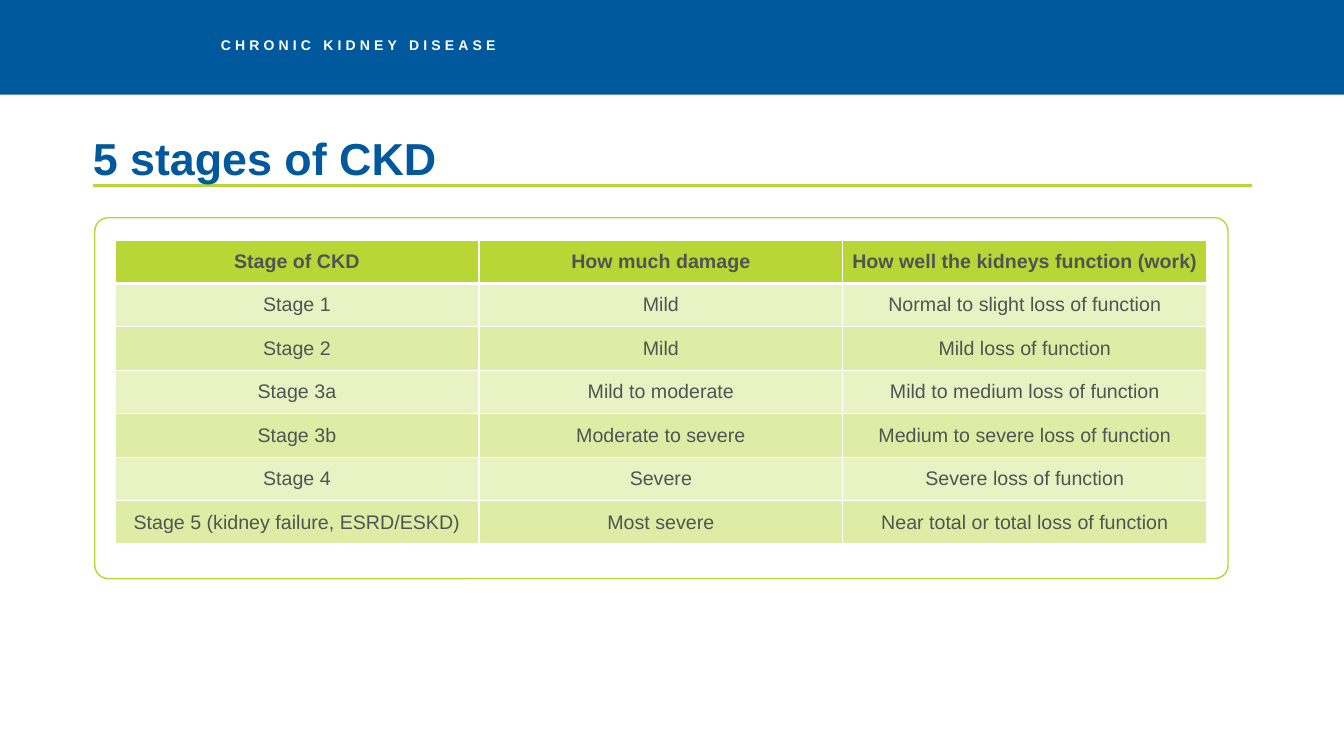
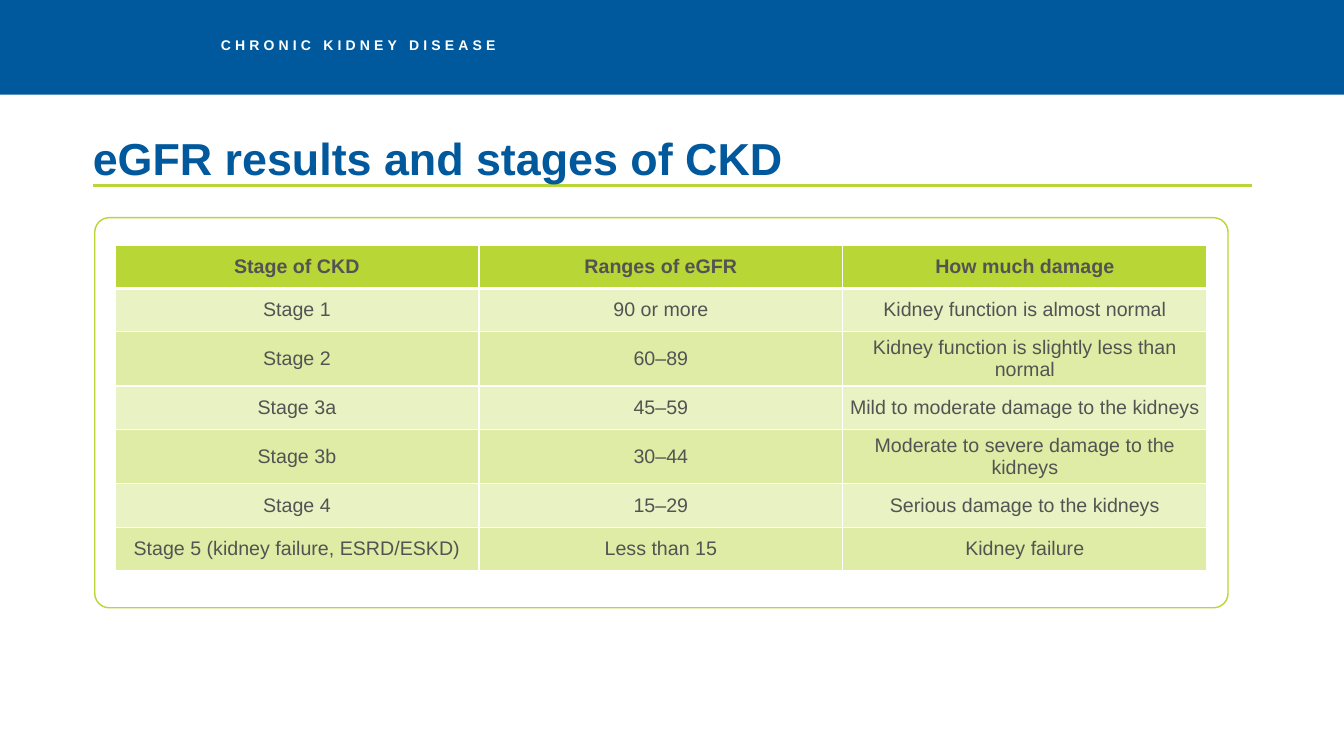
import pptx
import pptx.util
import pptx.dml.color
import pptx.enum.shapes
import pptx.enum.text
import pptx.oxml
import pptx.oxml.ns

Inches, Pt = pptx.util.Inches, pptx.util.Pt
Shape = pptx.enum.shapes.MSO_SHAPE
Align, Anchor = pptx.enum.text.PP_ALIGN, pptx.enum.text.MSO_ANCHOR

BLUE, GREEN, WHITE, GREY = "00599C", "B8D636", "FFFFFF", "535353"
BANDS = ("E9F2C3", "DEECA5")
HEAD = {"size": Pt(32), "bold": True, "name": "Arial"}
KICK = {"size": Pt(10), "bold": True, "name": "Arial"}
CELL = {"size": Pt(14), "name": "Arial"}
FRAME = dict.fromkeys(
    ("margin_left", "margin_top", "margin_right", "margin_bottom"), 0)
FRAME.update(word_wrap=True, auto_size=pptx.enum.text.MSO_AUTO_SIZE.NONE)
PAD = dict.fromkeys(
    ("margin_left", "margin_top", "margin_right", "margin_bottom"), Inches(0.05))
PAD.update(vertical_anchor=Anchor.MIDDLE)
TITLE = (0.92, 1.13, 11.5, 0.71)

STAGES = ("Stage 1", "Stage 2", "Stage 3a", "Stage 3b", "Stage 4",
          "Stage 5 (kidney failure, ESRD/ESKD)")
SLIDES = (
    {"title": "5 stages of CKD", "box": (0.94, 2.16, 11.24, 3.58), "gap": 0.22,
     "heads": ("Stage of CKD", "How much damage",
               "How well the kidneys function (work)"),
     "cols": (
         ("Mild", "Mild", "Mild to moderate", "Moderate to severe",
          "Severe", "Most severe"),
         ("Normal to slight loss of function", "Mild loss of function",
          "Mild to medium loss of function", "Medium to severe loss of function",
          "Severe loss of function", "Near total or total loss of function"))},
    {"title": "eGFR results and stages of CKD", "box": (0.94, 2.16, 11.24, 3.87),
     "gap": 0.27,
     "heads": ("Stage of CKD", "Ranges of eGFR", "How much damage"),
     "cols": (
         ("90 or more", "60–89", "45–59", "30–44", "15–29", "Less than 15"),
         ("Kidney function is almost normal",
          "Kidney function is slightly less than normal",
          "Mild to moderate damage to the kidneys",
          "Moderate to severe damage to the kidneys",
          "Serious damage to the kidneys", "Kidney failure"))},
)


def color(code):
    """Return the colour for a hex string."""
    return pptx.dml.color.RGBColor.from_string(code)


def apply(item, values):
    """Set each attribute in a dict of format values."""
    for key, value in values.items():
        setattr(item, key, value)


def place(box):
    """Turn a box in inches into lengths."""
    return [Inches(side) for side in box]


def write(para, text, style, code):
    """Put one styled run in a paragraph and return it."""
    run = para.add_run()
    run.text = text
    apply(run.font, style)
    run.font.color.rgb = color(code)
    return run


def block(slide, kind, box, fill, line=None):
    """Add a flat filled shape with an optional outline."""
    shape = slide.shapes.add_shape(kind, *place(box))
    shape.shadow.inherit = False
    shape.fill.solid()
    shape.fill.fore_color.rgb = color(fill)
    if line:
        shape.line.color.rgb = color(line)
        shape.line.width = Pt(1)
    else:
        shape.line.fill.background()
    return shape


def rule(slide, box):
    """Draw the green rule along the foot of a box."""
    left, top, width, high = box
    ends = place((left, top + high, left + width, top + high))
    line = slide.shapes.add_connector(
        pptx.enum.shapes.MSO_CONNECTOR.STRAIGHT, *ends)
    line.line.color.rgb = color(GREEN)
    line.line.width = Pt(2)
    pptx.oxml.ns.qn("a:effectLst")
    line.element.spPr.append(line.element.makeelement(
        pptx.oxml.ns.qn("a:effectLst"), {}))
    return line


def kicker(slide, box):
    """Write the spaced course name in the band."""
    shape = slide.shapes.add_textbox(*place(box))
    apply(shape.text_frame, FRAME)
    para = shape.text_frame.paragraphs[0]
    para.line_spacing = 0.9
    run = write(para, "CHRONIC KIDNEY DISEASE", KICK, WHITE)
    run.font.language_id = pptx.enum.lang.MSO_LANGUAGE_ID.ENGLISH_US
    run._r.get_or_add_rPr().set("spc", "300")
    return shape


def share(layout, slide):
    """Build the band, rule and course name and move them to the layout."""
    for holder in list(layout.placeholders)[1:]:
        layout.shapes.element.remove(holder.element)
    parts = (block(slide, Shape.RECTANGLE, (0, 0, 13.33, 0.94), BLUE),
             rule(slide, TITLE),
             kicker(slide, (2.19, 0.38, 3.1, 0.24)))
    for part in parts:
        layout.shapes.element.append(part.element)


def heading(slide, text, box):
    """Move and format the title placeholder."""
    title = slide.shapes.title
    apply(title, dict(zip(("left", "top", "width", "height"), place(box))))
    apply(title.text_frame, FRAME)
    title.text_frame.vertical_anchor = Anchor.BOTTOM
    para = title.text_frame.paragraphs[0]
    apply(para, {"alignment": Align.LEFT, "line_spacing": 0.9})
    write(para, text, HEAD, BLUE)


def border(cell, sizes):
    """Give a cell white edges of the listed widths in points."""
    props = cell._tc.get_or_add_tcPr()
    for side, size in sizes.items():
        props.append(pptx.oxml.parse_xml(
            f'<a:ln{side} {pptx.oxml.ns.nsdecls("a")} w="{Pt(size)}">'
            f'<a:solidFill><a:srgbClr val="{WHITE}"/></a:solidFill>'
            f'</a:ln{side}>'))


def grid(slide, rows, box):
    """Fill a banded table whose header row has thicker edges."""
    count = len(rows[0])
    frame = slide.shapes.add_table(len(rows), count, *place(box))
    table = frame.table
    table.horz_banding = False
    for row, texts in enumerate(rows):
        table.rows[row].height = Inches(box[3] / len(rows))
        top = row == 0
        for col, text in enumerate(texts):
            cell = table.cell(row, col)
            border(cell, {"L": 2 if top and col == 0 else 1,
                          "R": 2 if top and col == count - 1 else 1,
                          "T": 2 if row < 2 else 1,
                          "B": 2 if top else 1})
            apply(cell, PAD)
            cell.fill.solid()
            cell.fill.fore_color.rgb = color(
                GREEN if top else BANDS[(row - 1) % 2])
            para = cell.text_frame.paragraphs[0]
            para.alignment = Align.CENTER
            write(para, text, {**CELL, "bold": top}, GREY)


def panel(slide, item):
    """Draw the rounded card and set its table inside."""
    left, top, width, _ = item["box"]
    card = block(slide, Shape.ROUNDED_RECTANGLE, item["box"], WHITE, GREEN)
    card.adjustments[0] = 0.037
    rows = [item["heads"], *zip(STAGES, *item["cols"])]
    grid(slide, rows, (left + 0.2, top + item["gap"], width - 0.41, 3.02))


def main():
    """Build and save the deck."""
    deck = pptx.Presentation()
    apply(deck, {"slide_width": Inches(13.33), "slide_height": Inches(7.5)})
    layout = deck.slide_layouts.get_by_name("Title Only")
    for index, item in enumerate(SLIDES):
        slide = deck.slides.add_slide(layout)
        if index == 0:
            share(layout, slide)
        heading(slide, item["title"], TITLE)
        panel(slide, item)
    deck.save("out.pptx")


if __name__ == "__main__":
    main()
